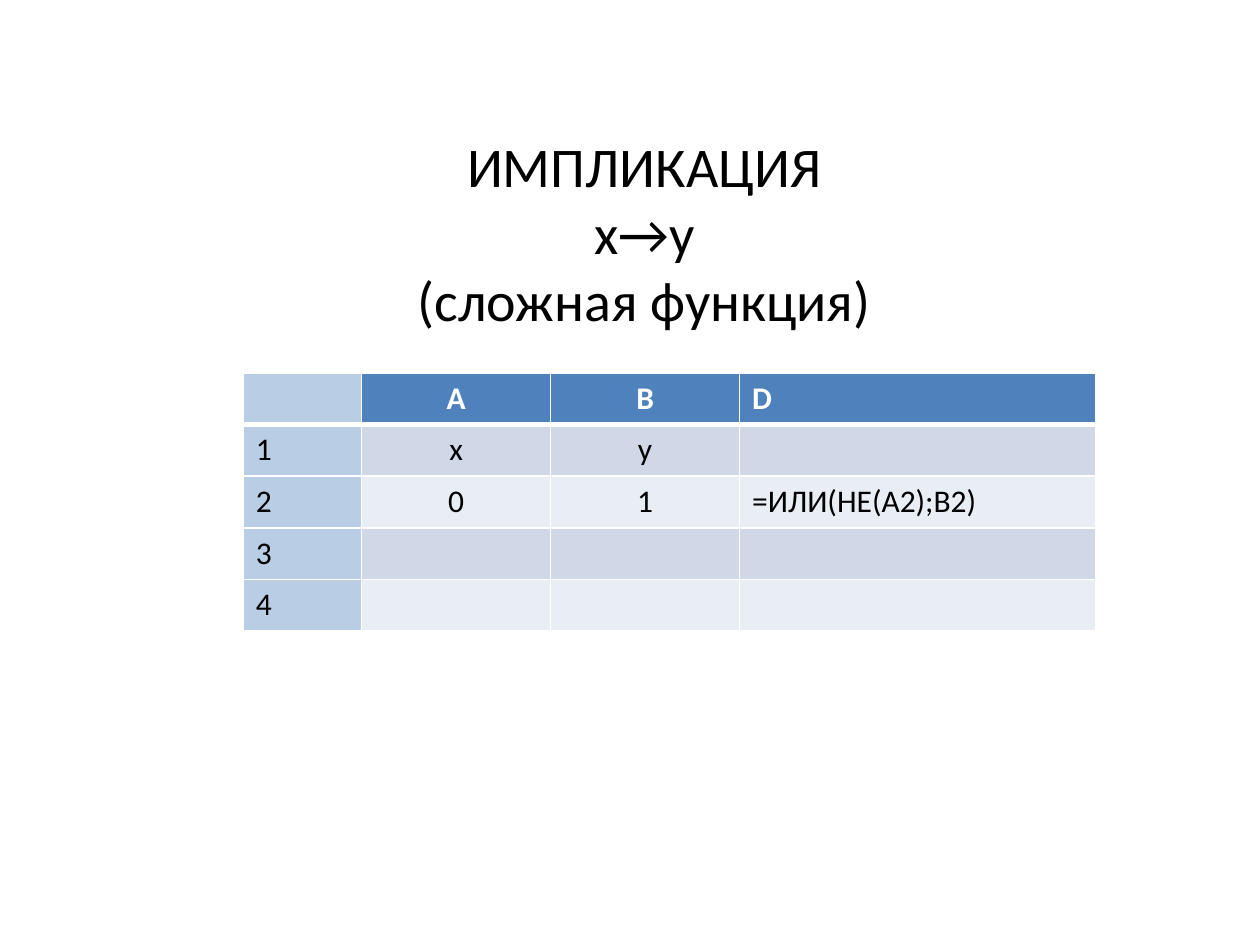
from lxml import etree
from pptx import Presentation
from pptx import util as u
from pptx.dml.color import RGBColor
from pptx.enum import text
from pptx.oxml import ns


def color(value):
    return RGBColor.from_string(value)


class SlideBuilder:
    font = "Calibri"
    black = "000000"
    white = "FFFFFF"
    header = "4F81BD"
    index = "B9CDE5"
    bands = ("D0D8E8", "E9EDF4")

    def __init__(self, prs):
        self.s = prs.slides.add_slide(prs.slide_layouts[5])

    def run(self, p, content, size, ink, bold=False):
        r = p.add_run()
        r.text = content
        r.font.name = self.font
        r.font.size = u.Pt(size)
        r.font.bold = bold
        r.font.color.rgb = color(ink)

    def title(self, lines, left, top, width, height):
        sp = self.s.shapes.title
        sp.left, sp.top = u.Inches(left), u.Inches(top)
        sp.width, sp.height = u.Inches(width), u.Inches(height)
        tf = sp.text_frame
        tf.word_wrap = True
        tf.auto_size = text.MSO_AUTO_SIZE.NONE
        tf.vertical_anchor = text.MSO_ANCHOR.TOP
        for i, line in enumerate(lines):
            p = tf.paragraphs[0] if i == 0 else tf.add_paragraph()
            p.alignment = text.PP_ALIGN.CENTER
            self.run(p, line, 32, self.black)

    def border(self, cell, side, width):
        tcPr = cell._tc.get_or_add_tcPr()
        ln = etree.SubElement(tcPr, ns.qn(f"a:ln{side}"), w=str(u.Pt(width)))
        fill = etree.SubElement(ln, ns.qn("a:solidFill"))
        etree.SubElement(fill, ns.qn("a:srgbClr"), val=self.white)

    def cell(self, cell, content, row, col):
        heavy = {(0, "B"), (1, "T")}
        for side in "LRTB":
            self.border(cell, side, 3 if (row, side) in heavy else 1)
        if col == 0:
            fill = self.index
        else:
            fill = self.header if row == 0 else self.bands[(row - 1) % 2]
        cell.fill.solid()
        cell.fill.fore_color.rgb = color(fill)
        p = cell.text_frame.paragraphs[0]
        p.font.size = u.Pt(18)
        p.alignment = text.PP_ALIGN.CENTER if col in (1, 2) else text.PP_ALIGN.LEFT
        if content:
            ink = self.white if row == 0 else self.black
            self.run(p, content, 18, ink, row == 0)

    def table(self, rows, left, top, widths, row_height):
        frame = self.s.shapes.add_table(
            len(rows), len(widths), u.Inches(left), u.Inches(top),
            u.Inches(sum(widths)), u.Inches(row_height * len(rows)))
        table = frame.table
        for column, width in zip(table.columns, widths):
            column.width = u.Inches(width)
        for i, row in enumerate(rows):
            table.rows[i].height = u.Inches(row_height)
            for j, content in enumerate(row):
                self.cell(table.cell(i, j), content, i, j)


def main():
    prs = Presentation()
    prs.slide_width, prs.slide_height = u.Inches(10), u.Inches(7.5)
    slide = SlideBuilder(prs)
    slide.title(["ИМПЛИКАЦИЯ", "x→y", "(сложная функция)"], 2.95, 0.99, 4.33, 1.72)
    rows = [
        ["", "A", "B", "D"],
        ["1", "x", "y", ""],
        ["2", "0", "1", "=ИЛИ(НЕ(А2);B2)"],
        ["3", "", "", ""],
        ["4", "", "", ""],
    ]
    slide.table(rows, 1.93, 2.96, [0.94, 1.5, 1.5, 2.83], 0.41)
    prs.save("out.pptx")


if __name__ == "__main__":
    main()
